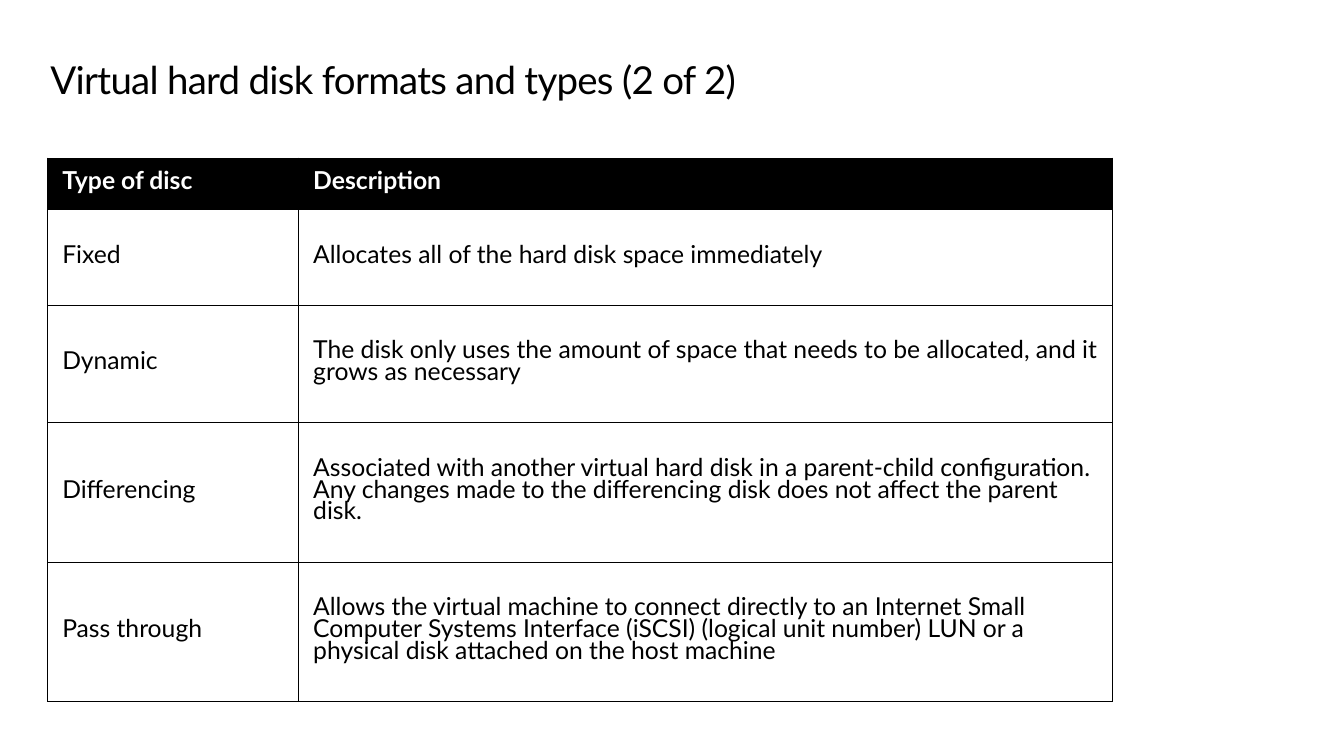
from dataclasses import dataclass

from lxml.etree import SubElement
from pptx import Presentation
from pptx.dml.color import RGBColor
from pptx.enum.text import MSO_ANCHOR as Anchor, MSO_AUTO_SIZE as AutoSize, PP_ALIGN as Align
from pptx.oxml import parse_xml
from pptx.oxml.ns import nsdecls, qn
from pptx.util import Inches, Pt


@dataclass(frozen=True)
class Theme:
    font: str = "Lato"
    ink: str = "000000"
    paper: str = "FFFFFF"
    title_size: float = 28
    title_tracking: float = -0.5
    body_size: float = 18
    body_leading: float = 16
    rule_width: float = 0.75
    cell_inset: float = 0.15


HEADINGS = ("Type of disc", "Description")
DISK_TYPES = (
    ("Fixed", "Allocates all of the hard disk space immediately"),
    ("Dynamic", "The disk only uses the amount of space that needs to be allocated, "
                "and it grows as necessary"),
    ("Differencing", "Associated with another virtual hard disk in a parent-child "
                     "configuration. Any changes made to the differencing disk does "
                     "not affect the parent disk."),
    ("Pass through", "Allows the virtual machine to connect directly to an Internet "
                     "Small Computer Systems Interface (iSCSI) (logical unit number) "
                     "LUN or a physical disk attached on the host machine"),
)
COLUMN_WIDTHS = (2.54, 8.24)
ROW_HEIGHTS = (0.52, 0.97, 1.18, 1.42, 1.41)


class SlideBuilder:
    def __init__(self, slide, theme):
        self.slide = slide
        self.theme = theme

    def add_run(self, paragraph, text, size, color, bold=False):
        run = paragraph.add_run()
        run.text = text
        run.font.name = self.theme.font
        run.font.size = Pt(size)
        run.font.bold = bold
        run.font.color.rgb = RGBColor.from_string(color)
        return run

    def set_title(self, text, left, top, width, height):
        title = self.slide.shapes.title
        title.left, title.top = Inches(left), Inches(top)
        title.width, title.height = Inches(width), Inches(height)
        frame = title.text_frame
        frame.word_wrap = True
        frame.auto_size = AutoSize.NONE
        frame.vertical_anchor = Anchor.TOP
        frame.margin_left = frame.margin_top = frame.margin_bottom = 0
        frame.margin_right = Inches(0.1)
        heading = frame.paragraphs[0]
        heading.alignment = Align.LEFT
        heading.line_spacing = 0.9
        run = self.add_run(heading, text, self.theme.title_size, self.theme.ink)
        run.font._element.set("spc", str(int(self.theme.title_tracking * 100)))

    def add_table(self, rows, left, top, widths, heights):
        frame = self.slide.shapes.add_table(
            len(rows), len(widths), Inches(left), Inches(top),
            Inches(sum(widths)), Inches(sum(heights)))
        table = frame.table
        table.horz_banding = False
        for column, width in zip(table.columns, widths):
            column.width = Inches(width)
        for row_index, (row, height) in enumerate(zip(rows, heights)):
            table.rows[row_index].height = Inches(height)
            for column_index, text in enumerate(row):
                self.fill_cell(table.cell(row_index, column_index), text,
                               is_header=row_index == 0)

    def fill_cell(self, cell, text, is_header):
        theme = self.theme
        inset = Inches(theme.cell_inset)
        cell.margin_left = cell.margin_right = inset
        cell.margin_top = cell.margin_bottom = inset
        cell.vertical_anchor = Anchor.MIDDLE
        self.rule_cell(cell)
        cell.fill.solid()
        cell.fill.fore_color.rgb = RGBColor.from_string(
            theme.ink if is_header else theme.paper)
        paragraph = cell.text_frame.paragraphs[0]
        paragraph.line_spacing = Pt(theme.body_leading)
        self.add_run(paragraph, text, theme.body_size,
                     theme.paper if is_header else theme.ink, bold=is_header)

    def rule_cell(self, cell):
        """Draw a thin line on all four sides of the cell."""
        properties = cell._tc.get_or_add_tcPr()
        for position, side in enumerate("LRTB"):
            rule = parse_xml(
                f'<a:ln{side} {nsdecls("a")} w="{Pt(self.theme.rule_width)}"/>')
            fill = SubElement(rule, qn("a:solidFill"))
            SubElement(fill, qn("a:srgbClr"), val=self.theme.ink)
            properties.insert(position, rule)


def main():
    deck = Presentation()
    deck.slide_width, deck.slide_height = Inches(13.6), Inches(7.65)
    title_only = deck.slide_layouts[5]
    builder = SlideBuilder(deck.slides.add_slide(title_only), Theme())
    builder.set_title("Virtual hard disk formats and types (2 of 2)",
                      0.51, 0.62, 12.61, 0.45)
    builder.add_table((HEADINGS, *DISK_TYPES), 0.48, 1.6, COLUMN_WIDTHS, ROW_HEIGHTS)
    deck.save("out.pptx")


if __name__ == "__main__":
    main()
